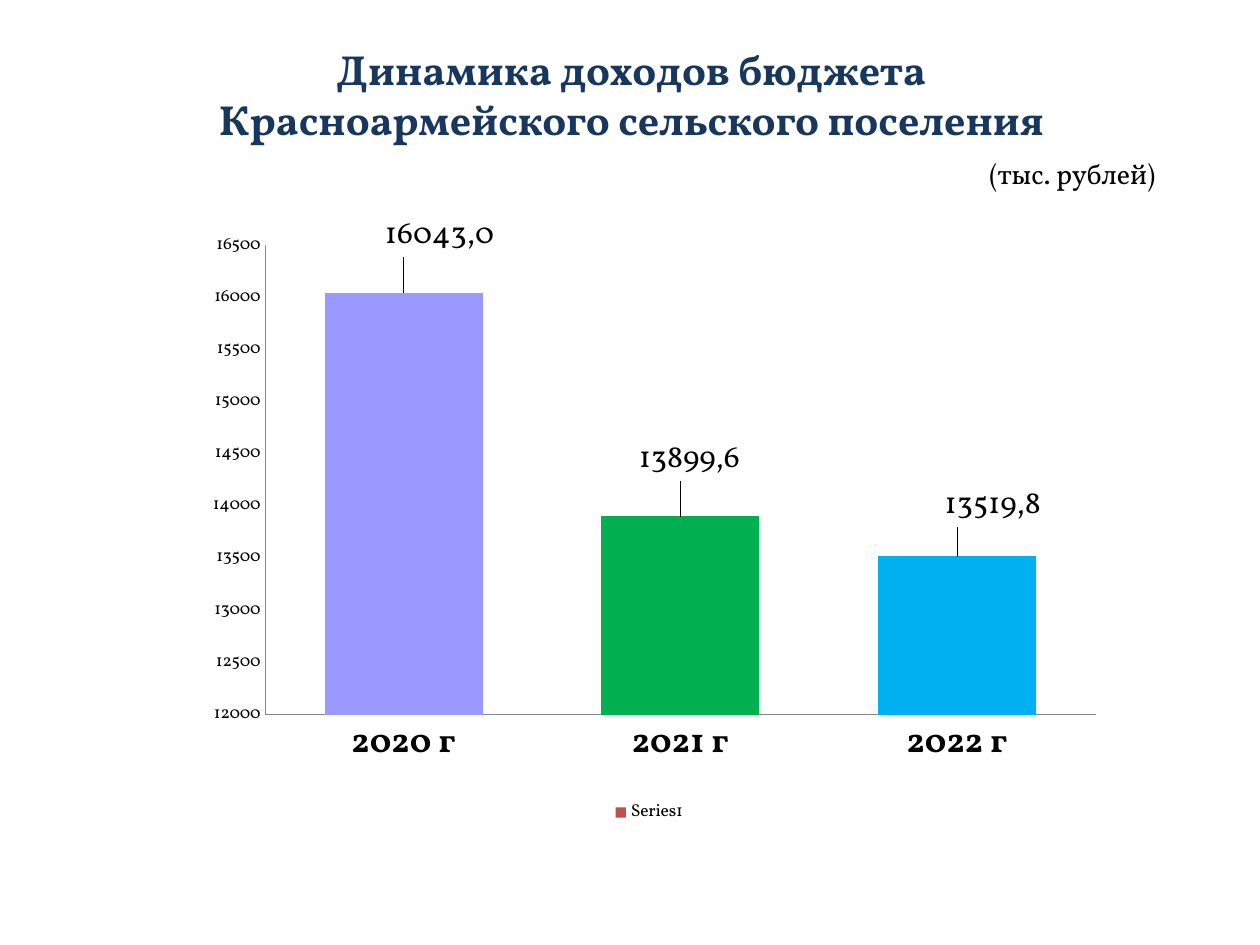
from lxml.etree import SubElement
from pptx import Presentation
from pptx.chart.data import CategoryChartData
from pptx.dml.color import RGBColor
from pptx.enum.chart import XL_CHART_TYPE, XL_LEGEND_POSITION, XL_TICK_MARK
from pptx.enum.text import MSO_ANCHOR, PP_ALIGN
from pptx.oxml.ns import qn
from pptx.util import Inches, Pt

FONT = "Vollkorn"
COLORS = {
    "title": "17375E",
    "text": "000000",
    "axis": "868686",
    "series": "C0504D",
}
BARS = [
    ("2020 г", 16043, "16043,0", "9999FF", (0.04, -0.05)),
    ("2021 г", 13899.6, "13899,6", "00B050", (0.01, -0.05)),
    ("2022 г", 13519.8, "13519,8", "00B0F0", (0.04, -0.04)),
]


def style(font, size, color="text", bold=False):
    font.name = FONT
    font.size = Pt(size)
    font.bold = bold
    font.color.rgb = RGBColor.from_string(COLORS[color])


def paint(item, color):
    item.format.fill.solid()
    item.format.fill.fore_color.rgb = RGBColor.from_string(color)


def add_line(para, text, size, color, bold, align):
    para.alignment = align
    run = para.add_run()
    run.text = text
    style(run.font, size, color, bold)


def add_title(slide):
    box = slide.shapes.add_textbox(Inches(0.51), Inches(0.42), Inches(9), Inches(1.01))
    frame = box.text_frame
    frame.word_wrap = True
    frame.vertical_anchor = MSO_ANCHOR.MIDDLE
    frame.margin_left = frame.margin_right = Inches(0.34)
    add_line(frame.paragraphs[0], "Динамика доходов бюджета", 24, "title", True, PP_ALIGN.CENTER)
    add_line(frame.add_paragraph(), "Красноармейского сельского поселения",
             24, "title", True, PP_ALIGN.CENTER)
    unit = frame.add_paragraph()
    unit.space_before = Pt(7)
    add_line(unit, "(тыс. рублей)", 16, "text", False, PP_ALIGN.RIGHT)


def set_layout(parent, index, values):
    for old in parent.findall(qn("c:layout")):
        parent.remove(old)
    layout = SubElement(parent, qn("c:layout"))
    manual = SubElement(layout, qn("c:manualLayout"))
    for tag, value in values:
        SubElement(manual, qn(f"c:{tag}")).set("val", str(value))
    parent.insert(index, layout)


def set_axis(axis, size, bold=False):
    axis.has_major_gridlines = False
    axis.major_tick_mark = axis.minor_tick_mark = XL_TICK_MARK.NONE
    axis.format.line.color.rgb = RGBColor.from_string(COLORS["axis"])
    axis.format.line.width = Pt(0.75)
    style(axis.tick_labels.font, size, bold=bold)


def add_labels(chart, series):
    labels = series.data_labels
    labels.show_value = True
    style(labels.font, 18)
    for index, (_, _, text, color, _) in enumerate(BARS):
        point = series.points[index]
        paint(point, color)
        run = point.data_label.text_frame.paragraphs[0].add_run()
        run.text = text
        style(run.font, 18)
    for node, bar in zip(chart._chartSpace.iter(qn("c:dLbl")), BARS):
        set_layout(node, 1, zip("xy", bar[4]))


def add_bars(slide):
    data = CategoryChartData()
    data.categories = [bar[0] for bar in BARS]
    data.add_series("Series1", [bar[1] for bar in BARS])
    chart = slide.shapes.add_chart(
        XL_CHART_TYPE.COLUMN_CLUSTERED,
        Inches(1.61), Inches(1.7), Inches(7.09), Inches(4.88), data,
    ).chart
    style(chart.font, 10)
    chart.has_title = False
    chart.has_legend = True
    chart.legend.position = XL_LEGEND_POSITION.BOTTOM
    chart.legend.include_in_layout = False
    style(chart.legend.font, 10)
    set_axis(chart.category_axis, 20, True)
    scale = chart.value_axis
    set_axis(scale, 10)
    scale.minimum_scale, scale.maximum_scale = 12000, 16500
    scale.major_unit = 500
    plot = chart.plots[0]
    plot.gap_width = 75
    plot.vary_by_categories = False
    series = plot.series[0]
    paint(series, COLORS["series"])
    add_labels(chart, series)
    area = next(chart._chartSpace.iter(qn("c:plotArea")))
    set_layout(area, 0, [
        ("layoutTarget", "inner"), ("xMode", "edge"), ("yMode", "edge"),
        ("x", 0.07), ("y", 0.03), ("w", 0.93), ("h", 0.78),
    ])


def main():
    deck = Presentation()
    deck.slide_width, deck.slide_height = Inches(10), Inches(7.5)
    slide = deck.slides.add_slide(deck.slide_layouts[6])
    add_title(slide)
    add_bars(slide)
    deck.save("out.pptx")


if __name__ == "__main__":
    main()
